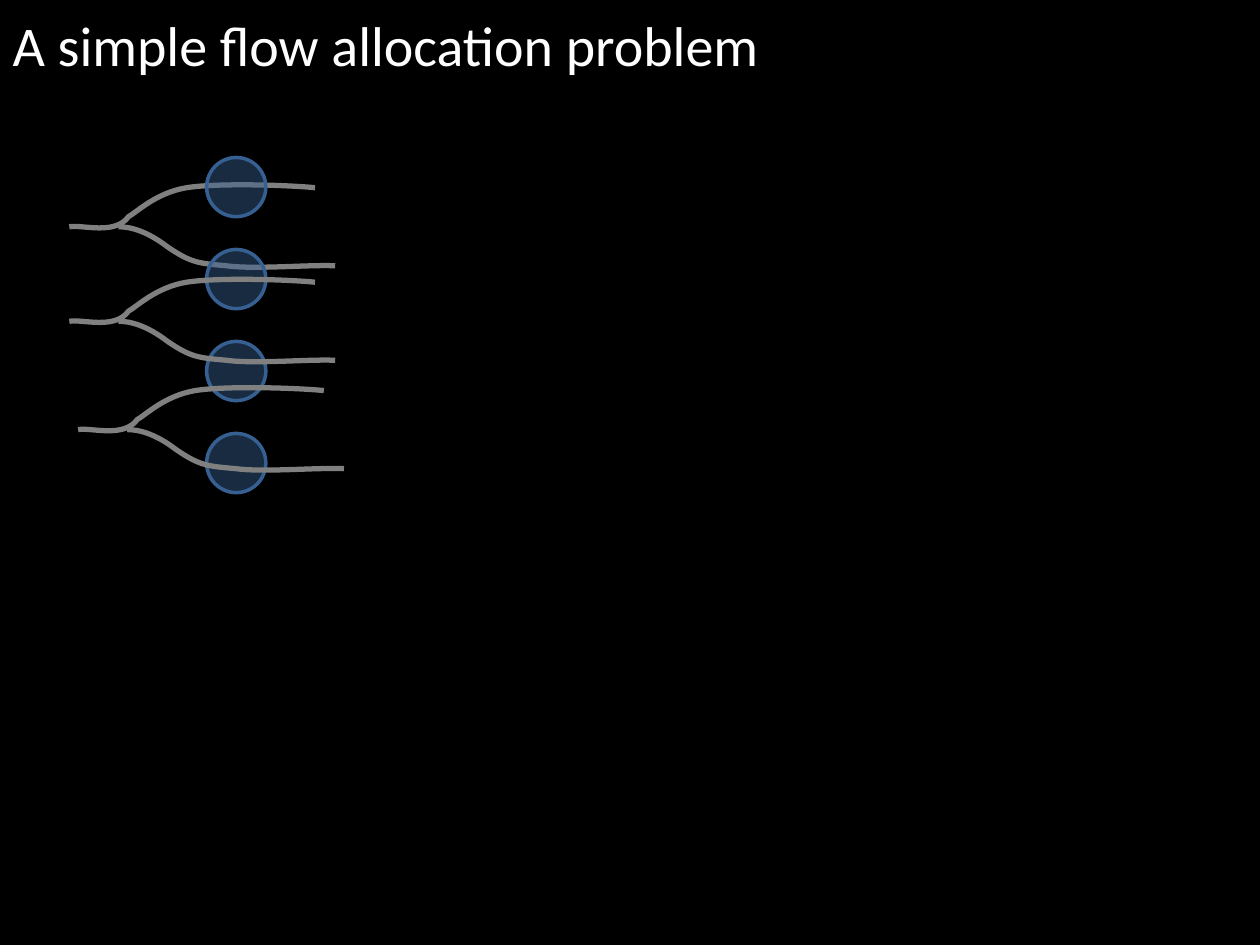
from lxml import etree
from pptx import Presentation
from pptx.dml.color import RGBColor
from pptx.enum import shapes, text
from pptx.oxml import ns
from pptx.util import Inches, Pt

BLACK = RGBColor(0x00, 0x00, 0x00)
WHITE = RGBColor(0xFF, 0xFF, 0xFF)
GRAY = RGBColor(0x80, 0x80, 0x80)
BLUE = RGBColor(0x37, 0x60, 0x92)

UPPER_BRANCH = [
    (0, 0),
    (0.1, -0.02), (0.36, 0.07), (0.47, -0.08),
    (0.54, -0.12), (0.69, -0.27), (0.93, -0.31),
    (1.18, -0.35), (1.75, -0.33), (1.95, -0.31),
]
LOWER_BRANCH = [
    (0.39, 0),
    (0.48, 0), (0.61, 0.03), (0.78, 0.16),
    (0.97, 0.29), (1.03, 0.29), (1.25, 0.31),
    (1.47, 0.34), (1.9, 0.3), (2.11, 0.31),
]
FORK_STARTS = [(0.55, 1.8), (0.55, 2.55), (0.62, 3.41)]

CIRCLE_COUNT = 4
CIRCLE_LEFT = 1.64
CIRCLE_TOP = 1.25
CIRCLE_SIZE = 0.47
CIRCLE_STEP = 0.73


def set_title(slide, wording):
    title = slide.shapes.title
    title.left, title.top = Inches(0), Inches(0)
    title.width, title.height = Inches(10), Inches(0.7)
    frame = title.text_frame
    frame.word_wrap = True
    frame.vertical_anchor = text.MSO_ANCHOR.MIDDLE
    paragraph = frame.paragraphs[0]
    paragraph.alignment = text.PP_ALIGN.LEFT
    run = paragraph.add_run()
    run.text = wording
    run.font.name = "Calibri"
    run.font.size = Pt(32)
    run.font.color.rgb = WHITE


def lines_to_curves(shape):
    segments = list(shape._element.iter(ns.qn("a:lnTo")))
    for first in range(0, len(segments), 3):
        curve = etree.Element(ns.qn("a:cubicBezTo"))
        segments[first].addprevious(curve)
        for segment in segments[first:first + 3]:
            curve.append(segment[0])
            segment.getparent().remove(segment)


def add_branch(group, start, offsets):
    points = [(Inches(start[0] + x), Inches(start[1] + y)) for x, y in offsets]
    builder = group.shapes.build_freeform(*points[0])
    builder.add_line_segments(points[1:], close=False)
    branch = builder.convert_to_shape()
    lines_to_curves(branch)
    branch.shadow.inherit = False
    branch.fill.background()
    branch.line.color.rgb = GRAY
    branch.line.width = Pt(3)


def add_fork(slide, start):
    group = slide.shapes.add_group_shape()
    for offsets in (UPPER_BRANCH, LOWER_BRANCH):
        add_branch(group, start, offsets)


def add_circle(slide, top):
    circle = slide.shapes.add_shape(
        shapes.MSO_SHAPE.OVAL, Inches(CIRCLE_LEFT), Inches(top),
        Inches(CIRCLE_SIZE), Inches(CIRCLE_SIZE))
    circle.shadow.inherit = False
    circle.fill.solid()
    circle.fill.fore_color.rgb = BLUE
    color = circle._element.spPr.find(ns.qn("a:solidFill"))[0]
    etree.SubElement(color, ns.qn("a:alpha"), val="45000")
    circle.line.color.rgb = BLUE
    circle.line.width = Pt(2)


def main():
    presentation = Presentation()
    presentation.slide_width = Inches(10)
    presentation.slide_height = Inches(7.5)
    slide = presentation.slides.add_slide(presentation.slide_layouts[5])
    slide.background.fill.solid()
    slide.background.fill.fore_color.rgb = BLACK

    set_title(slide, "A simple flow allocation problem")
    add_fork(slide, FORK_STARTS[0])
    for index in range(CIRCLE_COUNT):
        add_circle(slide, CIRCLE_TOP + index * CIRCLE_STEP)
    for start in FORK_STARTS[1:]:
        add_fork(slide, start)

    presentation.save("out.pptx")


if __name__ == "__main__":
    main()
